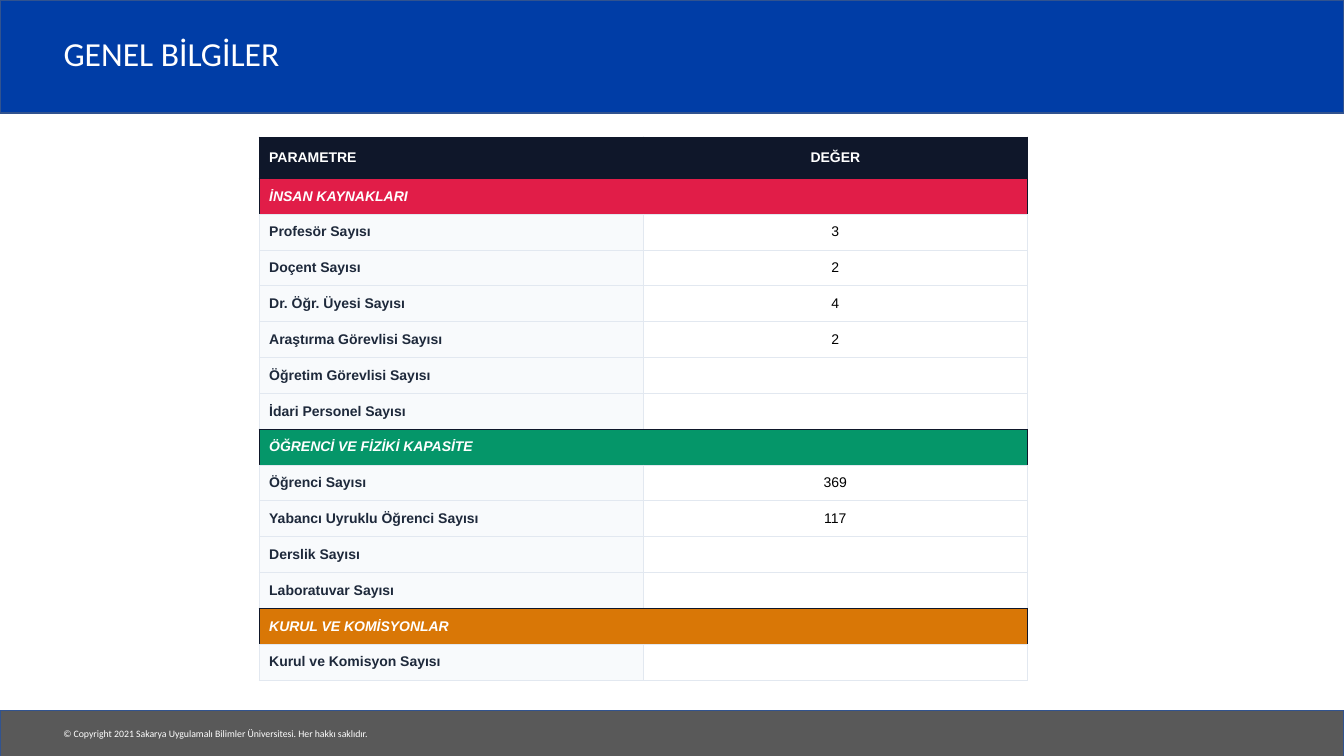
from lxml import etree
from pptx import Presentation
from pptx.dml.color import RGBColor
from pptx.enum.shapes import MSO_SHAPE
from pptx.enum.text import MSO_ANCHOR, MSO_AUTO_SIZE, PP_ALIGN
from pptx.oxml.ns import qn
from pptx.util import Inches, Pt

COLORS = {
    "blue": "003DA6", "gray": "595959", "outline": "31538F",
    "white": "FFFFFF", "black": "000000", "navy": "0F172A",
    "slate": "1E293B", "pale": "F8FAFC", "grid": "E2E8F0",
    "red": "E11D48", "green": "059669", "orange": "D97706",
}
SECTIONS = [
    ("İNSAN KAYNAKLARI", "red", [
        ("Profesör Sayısı", "3"),
        ("Doçent Sayısı", "2"),
        ("Dr. Öğr. Üyesi Sayısı", "4"),
        ("Araştırma Görevlisi Sayısı", "2"),
        ("Öğretim Görevlisi Sayısı", ""),
        ("İdari Personel Sayısı", ""),
    ]),
    ("ÖĞRENCİ VE FİZİKİ KAPASİTE", "green", [
        ("Öğrenci Sayısı", "369"),
        ("Yabancı Uyruklu Öğrenci Sayısı", "117"),
        ("Derslik Sayısı", ""),
        ("Laboratuvar Sayısı", ""),
    ]),
    ("KURUL VE KOMİSYONLAR", "orange", [
        ("Kurul ve Komisyon Sayısı", ""),
    ]),
]
HEADER_HEIGHT = 0.41
CELL_FORMATS = {
    "header": {"bold": True, "color": "white"},
    "section": {"bold": True, "italic": True, "color": "white"},
    "label": {"bold": True, "color": "slate"},
    "value": {"bold": False, "color": "black"},
}


def rgb(name):
    return RGBColor.from_string(COLORS[name])


def format_font(font, color, **values):
    font.color.rgb = rgb(color)
    for name, value in values.items():
        setattr(font, name, value)


def place(shape, box):
    for name, length in zip(("left", "top", "width", "height"), box):
        setattr(shape, name, Inches(length))


def add_band(slide, box, color):
    band = slide.shapes.add_shape(MSO_SHAPE.RECTANGLE, *map(Inches, box))
    band.shadow.inherit = False
    band.fill.solid()
    band.fill.fore_color.rgb = rgb(color)
    band.line.color.rgb = rgb("outline")
    band.line.width = Pt(1)


def add_header(slide, box):
    left, top, width, height = box
    add_band(slide, box, "blue")
    title = slide.shapes.title
    slide.shapes._spTree.append(title._element)  # bring in front of the band
    place(title, (left + 0.53, top + 0.19, 11.03, 0.73))
    title.text = "GENEL BİLGİLER"
    frame = title.text_frame
    frame.auto_size = MSO_AUTO_SIZE.NONE
    frame.vertical_anchor = MSO_ANCHOR.MIDDLE
    paragraph = frame.paragraphs[0]
    paragraph.alignment = PP_ALIGN.LEFT
    paragraph.line_spacing = 0.9
    format_font(paragraph.runs[0].font, "white", name="Calibri", size=Pt(24))


def add_footer(slide, box):
    left, top, width, height = box
    add_band(slide, box, "gray")
    text_box = slide.shapes.add_textbox(
        *map(Inches, (left + 0.53, top + 0.12, 3.29, 0.22)))
    frame = text_box.text_frame
    frame.word_wrap = True
    frame.text = "© Copyright 2021 Sakarya Uygulamalı Bilimler Üniversitesi. Her hakkı saklıdır."
    format_font(frame.paragraphs[0].runs[0].font, "white", name="Calibri", size=Pt(7))


def set_borders(cell, **colors):
    """Draw the four sides; a side not named takes the grid colour."""
    properties = cell._tc.get_or_add_tcPr()
    for side in "LRTB":
        line = etree.SubElement(properties, qn(f"a:ln{side}"), w=str(Pt(0.75)))
        fill = etree.SubElement(line, qn("a:solidFill"))
        etree.SubElement(fill, qn("a:srgbClr"), val=COLORS[colors.get(side, "grid")])


def fill_cell(cell, text, kind, fill, centered=False, **borders):
    set_borders(cell, **borders)
    cell.fill.solid()
    cell.fill.fore_color.rgb = rgb(fill)
    cell.vertical_anchor = MSO_ANCHOR.MIDDLE
    side = Inches(0.07 if kind == "value" else 0.1)
    edge = Inches(0.1 if kind == "header" else 0.07)
    cell.margin_left = cell.margin_right = side
    cell.margin_top = cell.margin_bottom = edge
    paragraph = cell.text_frame.paragraphs[0]
    paragraph.alignment = PP_ALIGN.CENTER if centered else PP_ALIGN.LEFT
    if text:
        run = paragraph.add_run()
        run.text = text
        format_font(run.font, name="Arial", size=Pt(10), **CELL_FORMATS[kind])
    else:  # keeps an empty row from growing
        etree.SubElement(paragraph._p, qn("a:endParaRPr"), sz="1000")


def add_information_table(slide, box):
    rows = []
    for heading, color, entries in SECTIONS:
        rows.append((heading, color, None))
        rows += [(label, None, value) for label, value in entries]
    frame = slide.shapes.add_table(len(rows) + 1, 2, *map(Inches, box))
    table = frame.table
    row_height = (box[3] - HEADER_HEIGHT) / len(rows)
    for row in table.rows:
        row.height = Inches(row_height)
    table.rows[0].height = Inches(HEADER_HEIGHT)

    dark = dict.fromkeys("LRTB", "navy")
    for column, text in enumerate(("PARAMETRE", "DEĞER")):
        fill_cell(table.cell(0, column), text, "header", "navy", column == 1, **dark)

    for index, (text, color, value) in enumerate(rows, 1):
        first, second = table.cell(index, 0), table.cell(index, 1)
        if color:
            first.merge(second)
            borders = dict.fromkeys("LRT", "navy")
            fill_cell(first, text, "section", color, **borders)
            fill_cell(second, "", "section", color, **borders)
        else:
            before_section = index < len(rows) and rows[index][1]
            borders = {"B": "navy"} if before_section else {}
            fill_cell(first, text, "label", "pale", **borders)
            fill_cell(second, value, "value", "white", True, **borders)


def main():
    presentation = Presentation()
    presentation.slide_width = Inches(13.33)
    presentation.slide_height = Inches(7.5)
    slide = presentation.slides.add_slide(presentation.slide_layouts[5])
    add_header(slide, (0, 0, 13.33, 1.12))
    add_footer(slide, (0, 7.05, 13.33, 0.46))
    add_information_table(slide, (2.57, 1.36, 7.62, 5.39))
    presentation.save("out.pptx")


if __name__ == "__main__":
    main()
